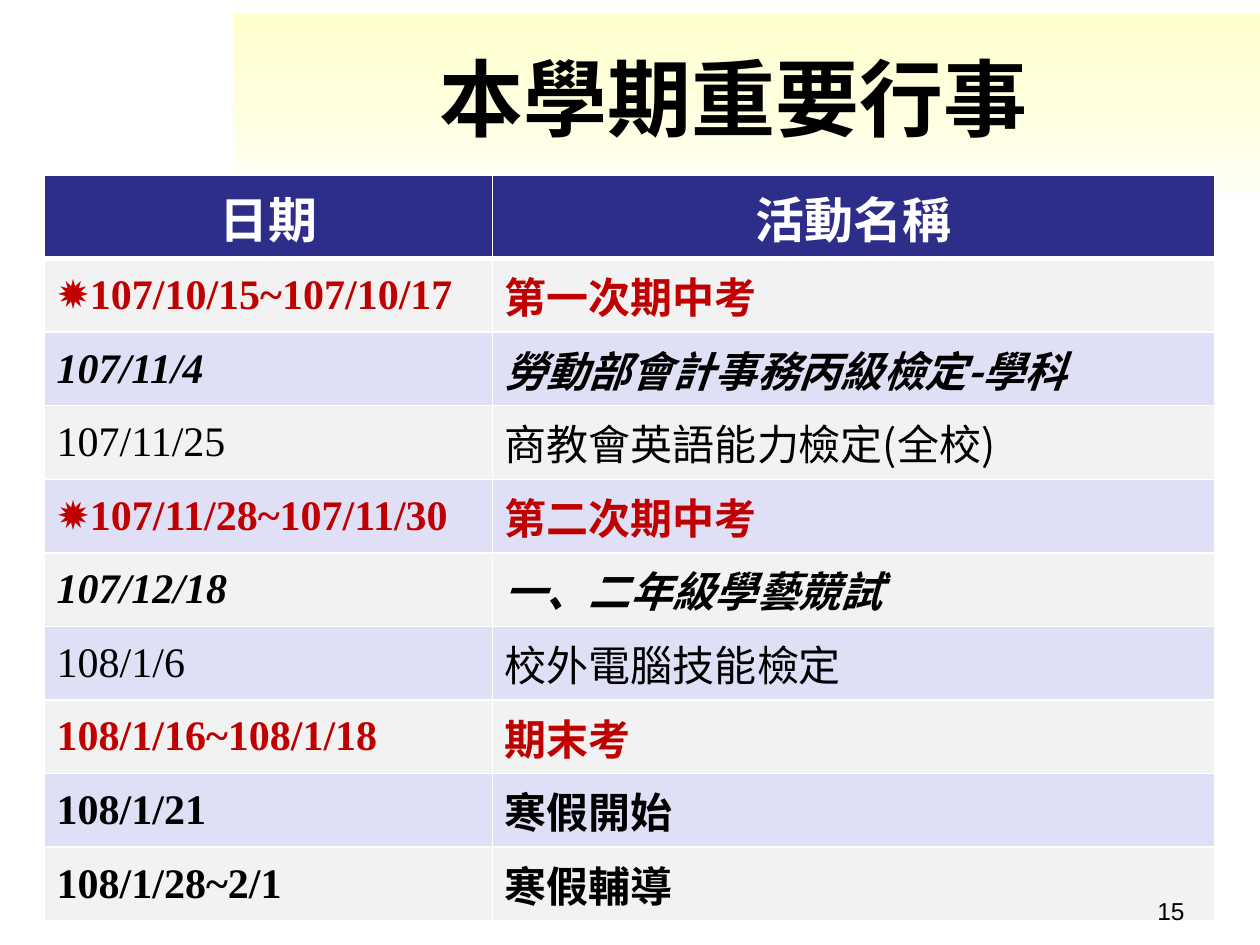
from lxml import etree
from pptx import Presentation
from pptx import util as u
from pptx.dml.color import RGBColor
from pptx.enum import shapes, text
from pptx.oxml.ns import qn

CJK, LATIN, SANS = "Noto Sans CJK SC", "Times New Roman", "Arial"
WHITE, BLACK, RED, NAVY = "FFFFFF", "000000", "C00000", "2D2D8A"
BANDS = ["F2F2F2", "DFDFF5"]
W, H = 10, 7.5  # slide size in inches

EXAM = dict(color=RED, bold=True)
CONTEST = dict(color=BLACK, bold=True, italic=True)
PLAIN = dict(color=BLACK, bold=False)
HOLIDAY = dict(color=BLACK, bold=True)

# Date, activity runs, row style
EVENTS = [
    ("✹107/10/15~107/10/17", [("第一次期中考", CJK)], EXAM),
    ("107/11/4", [("勞動部會計事務丙級檢定-學科", CJK)], CONTEST),
    ("107/11/25", [("商教會英語能力檢定(全校)", CJK)], PLAIN),
    ("✹107/11/28~107/11/30", [("第二次期中考", CJK)], EXAM),
    ("107/12/18", [("一、二年級學藝競試", CJK)], CONTEST),
    ("108/1/6", [("校外", CJK), ("電腦技能檢定", CJK)], PLAIN),
    ("108/1/16~108/1/18", [("期末考", CJK)], EXAM),
    ("108/1/21", [("寒假開始", CJK)], HOLIDAY),
    ("108/1/28~2/1", [("寒假輔導", CJK)], HOLIDAY),
]


def rgb(value):
    return RGBColor.from_string(value)


def inches(box):
    return [u.Inches(v) for v in box]


def add_run(p, words, face, size, color, bold=False, italic=False):
    r = p.add_run()
    r.text = words
    fmt = dict(name=face, size=u.Pt(size), bold=bold, italic=italic)
    for key, value in fmt.items():
        setattr(r.font, key, value)
    r.font.color.rgb = rgb(color)
    if face == CJK:
        ea = etree.SubElement(r.font._element, qn("a:ea"))
        ea.set("typeface", face)


def add_band(s, box):
    band = s.shapes.add_shape(shapes.MSO_SHAPE.RECTANGLE, *inches(box))
    band.shadow.inherit = False
    band.line.fill.background()
    band.fill.gradient()
    band.fill.gradient_angle = 270
    for stop, color in zip(band.fill.gradient_stops, ["FFFFCC", "FFFFF3"]):
        stop.color.rgb = rgb(color)
    return band


def add_title(s, box, words):
    title = s.shapes.title
    title.left, title.top, title.width, title.height = inches(box)
    tf = title.text_frame
    fmt = dict(vertical_anchor=text.MSO_ANCHOR.MIDDLE,
               auto_size=text.MSO_AUTO_SIZE.NONE, word_wrap=True)
    for key, value in fmt.items():
        setattr(tf, key, value)
    tf.paragraphs[0].alignment = text.PP_ALIGN.CENTER
    add_run(tf.paragraphs[0], words, CJK, 48, BLACK, bold=True)
    return title


def set_borders(cell, bottom):
    tc_pr = cell._tc.get_or_add_tcPr()
    for side, width in dict(L=1, R=1, T=1, B=bottom).items():
        ln = etree.SubElement(tc_pr, qn(f"a:ln{side}"), w=str(u.Pt(width)))
        fill = etree.SubElement(ln, qn("a:solidFill"))
        etree.SubElement(fill, qn("a:srgbClr"), val=WHITE)


def fill_cell(cell, runs, fill, align, size, style, bottom=1):
    set_borders(cell, bottom)
    cell.fill.solid()
    cell.fill.fore_color.rgb = rgb(fill)
    cell.vertical_anchor = text.MSO_ANCHOR.MIDDLE
    p = cell.text_frame.paragraphs[0]
    p.alignment = align
    # Hanging indent
    p_pr = p._p.get_or_add_pPr()
    p_pr.set("marL", str(u.Inches(0.38)))
    p_pr.set("indent", str(u.Inches(-0.38)))
    for words, face in runs:
        add_run(p, words, face, size, **style)


def add_calendar(s, box, date_share=0.383, header_height=0.63):
    left, top, width, height = box
    count = len(EVENTS)
    table = s.shapes.add_table(count + 1, 2, *inches(box)).table
    for col, share in zip(table.columns, [date_share, 1 - date_share]):
        col.width = u.Inches(width * share)
    row_height = (height - header_height) / count
    for row, size in zip(table.rows, [header_height] + [row_height] * count):
        row.height = u.Inches(size)

    # Header row
    for col, words in enumerate(["日期", "活動名稱"]):
        fill_cell(table.cell(0, col), [(words, CJK)], NAVY, text.PP_ALIGN.CENTER,
                  28, dict(color=WHITE, bold=True), bottom=3)
    # Event rows
    for i, (date, activity, style) in enumerate(EVENTS):
        for col, runs in enumerate([[(date, LATIN)], activity]):
            fill_cell(table.cell(i + 1, col), runs, BANDS[i % 2],
                      text.PP_ALIGN.LEFT, 24, style)


def add_page_number(s, box, number):
    tf = s.shapes.add_textbox(*inches(box)).text_frame
    tf.word_wrap = True
    tf.paragraphs[0].alignment = text.PP_ALIGN.RIGHT
    add_run(tf.paragraphs[0], number, SANS, 14, BLACK)


def main():
    prs = Presentation()
    prs.slide_width, prs.slide_height = u.Inches(W), u.Inches(H)
    s = prs.slides.add_slide(prs.slide_layouts[5])
    band = add_band(s, (0.185 * W, 0.11, 0.815 * W, 1.43))
    title = add_title(s, (0.177 * W, 0.38, 0.811 * W, 0.78), "本學期重要行事")
    title._element.addprevious(band._element)  # band lies behind the title
    add_calendar(s, (0.035 * W, 1.39, 0.929 * W, 5.4))
    add_page_number(s, (0.717 * W, 7.06, 0.233 * W, 0.39), "15")
    prs.save("out.pptx")


if __name__ == "__main__":
    main()
